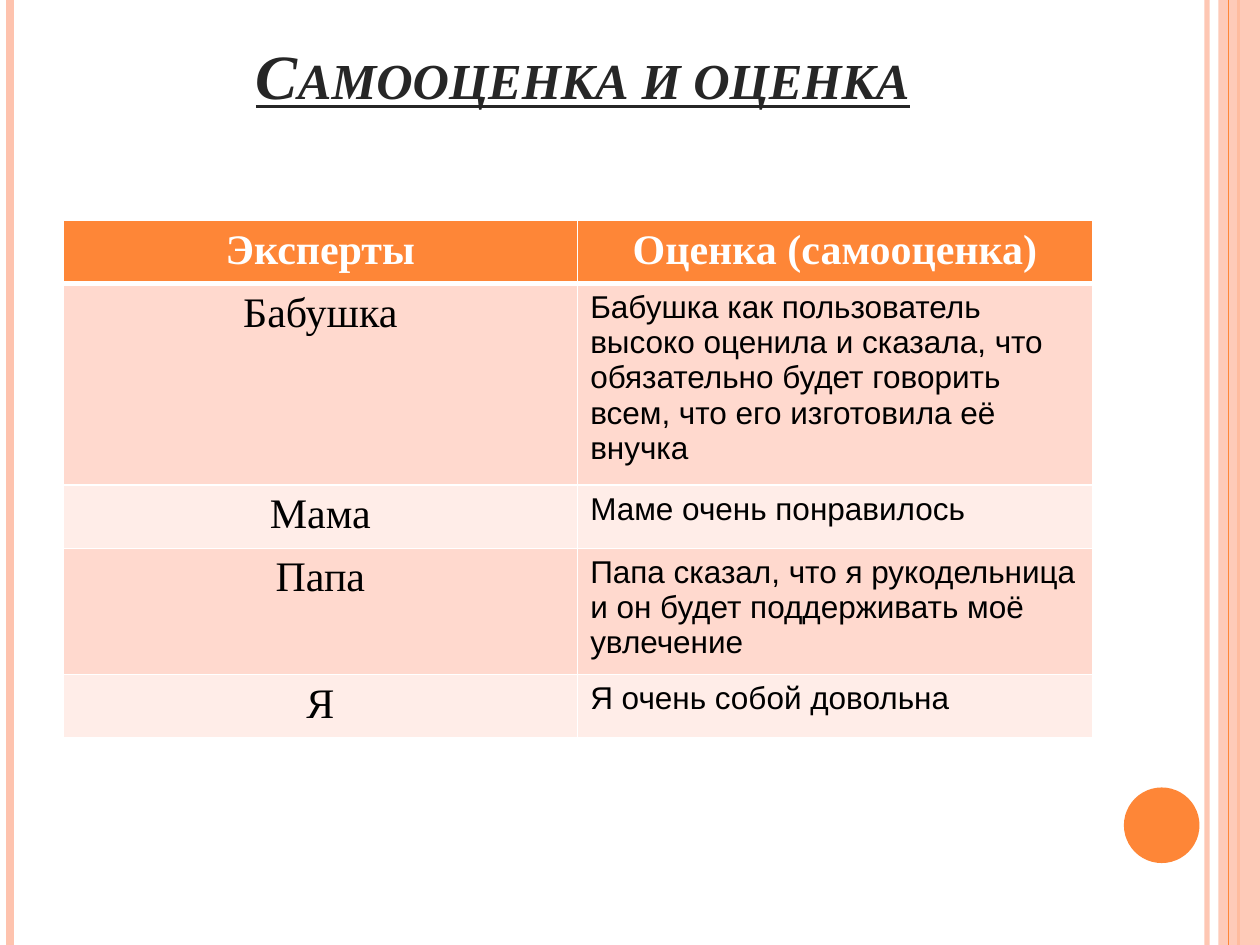
from dataclasses import dataclass

from lxml.etree import SubElement
from pptx import Presentation
from pptx.dml.color import RGBColor
from pptx.enum.shapes import MSO_CONNECTOR, MSO_SHAPE
from pptx.enum.text import MSO_ANCHOR, PP_ALIGN
from pptx.oxml import parse_xml
from pptx.oxml.ns import nsdecls, qn
from pptx.util import Inches, Pt

TITLE = "Самооценка и оценка"
HEADER = ("Эксперты", "Оценка (самооценка)")
REVIEWS = [
    ("Бабушка", "Бабушка как пользователь высоко оценила и сказала, что "
                "обязательно будет говорить всем, что его изготовила её внучка"),
    ("Мама", "Маме очень понравилось"),
    ("Папа", "Папа сказал, что я рукодельница и он будет поддерживать моё увлечение"),
    ("Я", "Я очень собой довольна"),
]


@dataclass(frozen=True)
class Theme:
    serif: str = "Times New Roman"
    sans: str = "Arial"
    accent: str = "FE8637"
    pale: str = "FEC3AE"
    bands: tuple = ("FFD9CE", "FFEDE8")
    white: str = "FFFFFF"
    black: str = "000000"
    title_color: str = "262626"
    title_size: int = 36
    expert_size: int = 24
    review_size: int = 18


THEME = Theme()
WIDTH, HEIGHT = 10, 7.5
MARGIN = WIDTH * 0.05
TABLE_TOP, TABLE_WIDTH = 1.75, 8.17
ROW_UNIT = 0.5
ROW_HEIGHTS = [ROW_UNIT * units for units in (1, 3.2, 1, 2, 1)]
# x, colour, width in points, opacity in percent
STRIPES_BEHIND = [
    (9.58, THEME.pale, 3, 93),
    (0.08, THEME.pale, 4.5, 100),
    (9.83, THEME.accent, 1.5, 100),
]
STRIPE_FRONT = (9.75, THEME.accent, 0.75, 100)
BAND_LEFT, BAND_OPACITY = 9.67, 87


def rgb(color):
    return RGBColor.from_string(color)


def set_opacity(fill_parent, percent):
    if percent < 100:
        color = next(fill_parent.iter(qn("a:srgbClr")))
        SubElement(color, qn("a:alpha"), val=str(percent * 1000))


def write(frame, text, *, font, size, color, align=PP_ALIGN.LEFT,
          bold=False, italic=False, underline=False, small_caps=False):
    frame.word_wrap = True
    paragraph = frame.paragraphs[0]
    paragraph.alignment = align
    run = paragraph.add_run()
    run.text = text
    run.font.name, run.font.size = font, Pt(size)
    run.font.color.rgb = rgb(color)
    run.font.bold, run.font.italic, run.font.underline = bold, italic, underline
    if small_caps:
        run.font._element.set("cap", "small")


def add_stripe(slide, x, color, width, opacity):
    stripe = slide.shapes.add_connector(
        MSO_CONNECTOR.STRAIGHT, Inches(x), 0, Inches(x), Inches(HEIGHT))
    stripe.line.color.rgb = rgb(color)
    stripe.line.width = Pt(width)
    properties = stripe._element.spPr
    set_opacity(properties, opacity)
    SubElement(properties, qn("a:effectLst"))


def add_plain_shape(slide, kind, left, top, width, height, color, opacity=100):
    shape = slide.shapes.add_shape(
        kind, Inches(left), Inches(top), Inches(width), Inches(height))
    shape.shadow.inherit = False
    shape.fill.solid()
    shape.fill.fore_color.rgb = rgb(color)
    shape.line.fill.background()
    set_opacity(shape._element.spPr, opacity)


def set_borders(cell, top, bottom):
    """Draw white borders, one point wide at the sides."""
    properties = cell._tc.get_or_add_tcPr()
    for index, (side, width) in enumerate(
            (("L", 1), ("R", 1), ("T", top), ("B", bottom))):
        properties.insert(index, parse_xml(
            f'<a:ln{side} {nsdecls("a")} w="{Pt(width)}"><a:solidFill>'
            f'<a:srgbClr val="{THEME.white}"/></a:solidFill></a:ln{side}>'))


def add_decor(slide):
    for stripe in STRIPES_BEHIND:
        add_stripe(slide, *stripe)
    add_plain_shape(slide, MSO_SHAPE.RECTANGLE, BAND_LEFT, 0,
                    WIDTH - BAND_LEFT, HEIGHT, THEME.pale, BAND_OPACITY)
    add_stripe(slide, *STRIPE_FRONT)
    add_plain_shape(slide, MSO_SHAPE.OVAL, 8.92, 6.25, 0.6, 0.6, THEME.accent)


def add_title(slide):
    title = slide.shapes.add_textbox(
        Inches(MARGIN), Inches(0.3), Inches(8.25), Inches(0.64))
    title.text_frame.vertical_anchor = MSO_ANCHOR.BOTTOM
    write(title.text_frame, TITLE, font=THEME.serif, size=THEME.title_size,
          color=THEME.title_color, align=PP_ALIGN.CENTER, bold=True,
          italic=True, underline=True, small_caps=True)


def add_reviews(slide):
    rows = [HEADER, *REVIEWS]
    table = slide.shapes.add_table(
        len(rows), len(HEADER), Inches(MARGIN), Inches(TABLE_TOP),
        Inches(TABLE_WIDTH), Inches(sum(ROW_HEIGHTS))).table
    for column in table.columns:
        column.width = Inches(TABLE_WIDTH / len(HEADER))
    expert_style = dict(font=THEME.serif, size=THEME.expert_size,
                        color=THEME.black, align=PP_ALIGN.CENTER)
    review_style = dict(font=THEME.sans, size=THEME.review_size, color=THEME.black)
    header_style = {**expert_style, "color": THEME.white, "bold": True}

    for r, texts in enumerate(rows):
        table.rows[r].height = Inches(ROW_HEIGHTS[r])
        is_header = r == 0
        fill = THEME.accent if is_header else THEME.bands[(r - 1) % 2]
        styles = [header_style] * 2 if is_header else [expert_style, review_style]
        for c, (text, style) in enumerate(zip(texts, styles)):
            cell = table.cell(r, c)
            cell.fill.solid()
            cell.fill.fore_color.rgb = rgb(fill)
            set_borders(cell, top=3 if r == 1 else 1, bottom=3 if is_header else 1)
            write(cell.text_frame, text, **style)


def main():
    deck = Presentation()
    deck.slide_width, deck.slide_height = Inches(WIDTH), Inches(HEIGHT)
    slide = deck.slides.add_slide(deck.slide_layouts[6])
    add_decor(slide)
    add_title(slide)
    add_reviews(slide)
    deck.save("out.pptx")


if __name__ == "__main__":
    main()
